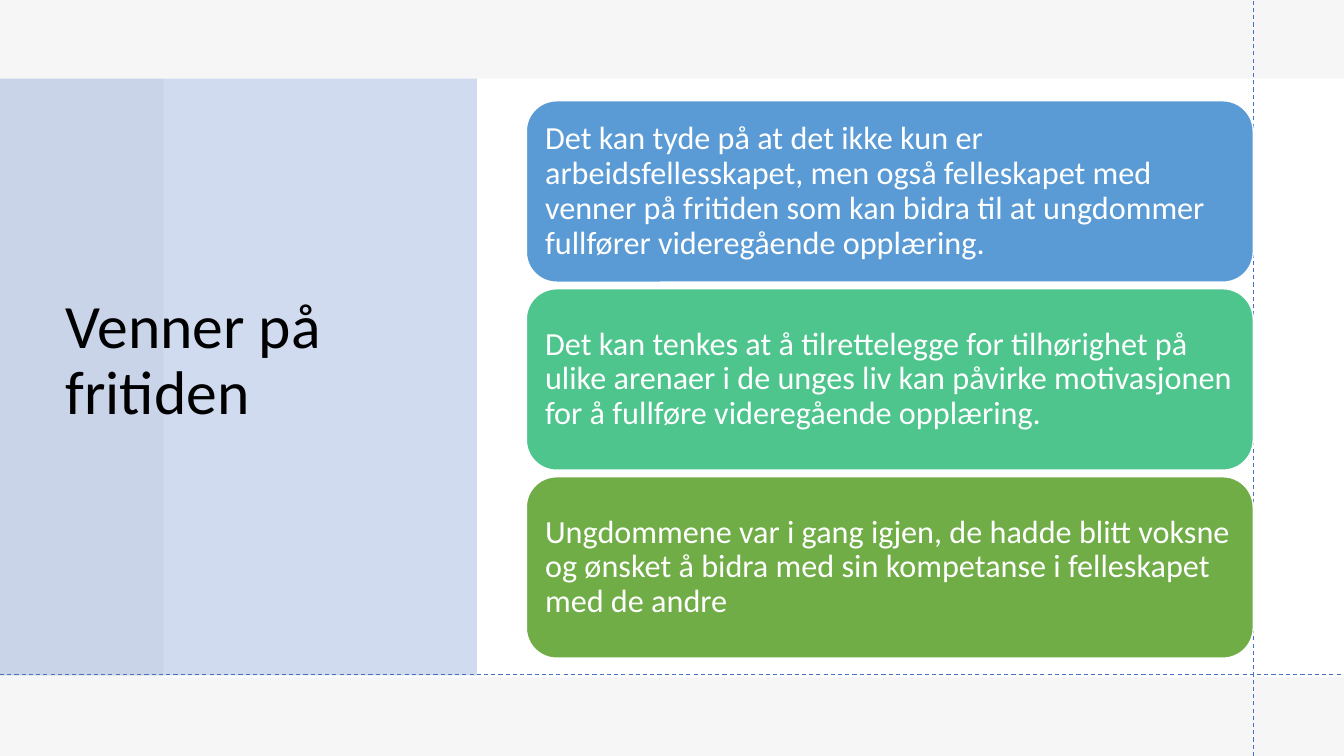
from pptx import Presentation
from pptx.dml.color import RGBColor
from pptx.enum.dml import MSO_LINE
from pptx.enum.shapes import MSO_CONNECTOR, MSO_SHAPE
from pptx.enum.text import MSO_ANCHOR, MSO_AUTO_SIZE, PP_ALIGN
from pptx.oxml.ns import qn
from pptx.util import Inches, Pt
from lxml import etree

RECT = MSO_SHAPE.RECTANGLE
ROUND = MSO_SHAPE.ROUNDED_RECTANGLE
LINE = MSO_CONNECTOR.STRAIGHT
DASH = MSO_LINE.DASH
MID = MSO_ANCHOR.MIDDLE
LEFT = PP_ALIGN.LEFT
FIXED = MSO_AUTO_SIZE.NONE

INK = {"white": "FFFFFF", "black": "000000", "grey": "E7E6E6",
       "accent": "4472C4", "blue": "5B9BD5", "mint": "4DC58D", "green": "70AD47"}
WIDE, HIGH = 13.33, 7.5
TOP, EDGE, BASE = 0.78, 12.43, 6.69
CARD_X, CARD_Y, CARD_H, STEP = 5.22, 1, 1.8, 1.865


def add_box(kind, box, color, alpha=100):
    shape = slide.shapes.add_shape(kind, *map(Inches, box))
    shape.shadow.inherit = False
    shape.fill.solid()
    shape.fill.fore_color.rgb = RGBColor.from_string(INK[color])
    shape.line.fill.background()
    if alpha < 100:
        tint = shape.element.spPr.find(".//" + qn("a:srgbClr"))
        etree.SubElement(tint, qn("a:alpha")).set("val", str(alpha * 1000))
    return shape


def set_text(shape, text, size, color):
    frame = shape.text_frame
    frame.text = text
    frame.word_wrap = True
    frame.auto_size = FIXED
    frame.vertical_anchor = MID
    para = frame.paragraphs[0]
    para.alignment = LEFT
    para.line_spacing = 0.9
    para.font.name = "Calibri"
    para.font.size = Pt(size)
    para.font.color.rgb = RGBColor.from_string(INK[color])


deck = Presentation()
deck.slide_width, deck.slide_height = Inches(WIDE), Inches(HIGH)
slide = deck.slides.add_slide(deck.slide_layouts[5])

add_box(RECT, (0, 0, WIDE, HIGH), "white")
add_box(RECT, (0, 0, WIDE, HIGH), "grey", 35)
add_box(RECT, (1.62, TOP, WIDE - 1.62, 5.94), "white")
add_box(RECT, (0, TOP, 4.73, 5.92), "accent", 25)

title = slide.shapes.title
title.left, title.top, title.width, title.height = map(Inches, (0.55, 0.74, 3.95, 5.69))
set_text(title, "Venner på fritiden", 44, "black")
title.element.getparent().append(title.element)

for ends in ((EDGE, HIGH, EDGE, 0), (0, BASE, WIDE, BASE)):
    guide = slide.shapes.add_connector(LINE, *map(Inches, ends))
    guide.line.color.rgb = RGBColor.from_string(INK["accent"])
    guide.line.width = Pt(0.75)
    guide.line.dash_style = DASH
    etree.SubElement(guide.element.spPr, qn("a:effectLst"))

cards = (
    ("blue", "Det kan tyde på at det ikke kun er arbeidsfellesskapet, men også felleskapet "
             "med venner på fritiden som kan bidra til at ungdommer fullfører videregående opplæring."),
    ("mint", "Det kan tenkes at å tilrettelegge for tilhørighet på ulike arenaer i de unges liv "
             "kan påvirke motivasjonen for å fullføre videregående opplæring."),
    ("green", "Ungdommene var i gang igjen, de hadde blitt voksne og ønsket å bidra "
              "med sin kompetanse i felleskapet med de andre"),
)
for row, (color, text) in enumerate(cards):
    card = add_box(ROUND, (CARD_X, CARD_Y + row * STEP, EDGE - CARD_X, CARD_H), color)
    card.line.color.rgb = RGBColor.from_string(INK["white"])
    card.line.width = Pt(1)
    set_text(card, text, 23, "white")

deck.save("out.pptx")
